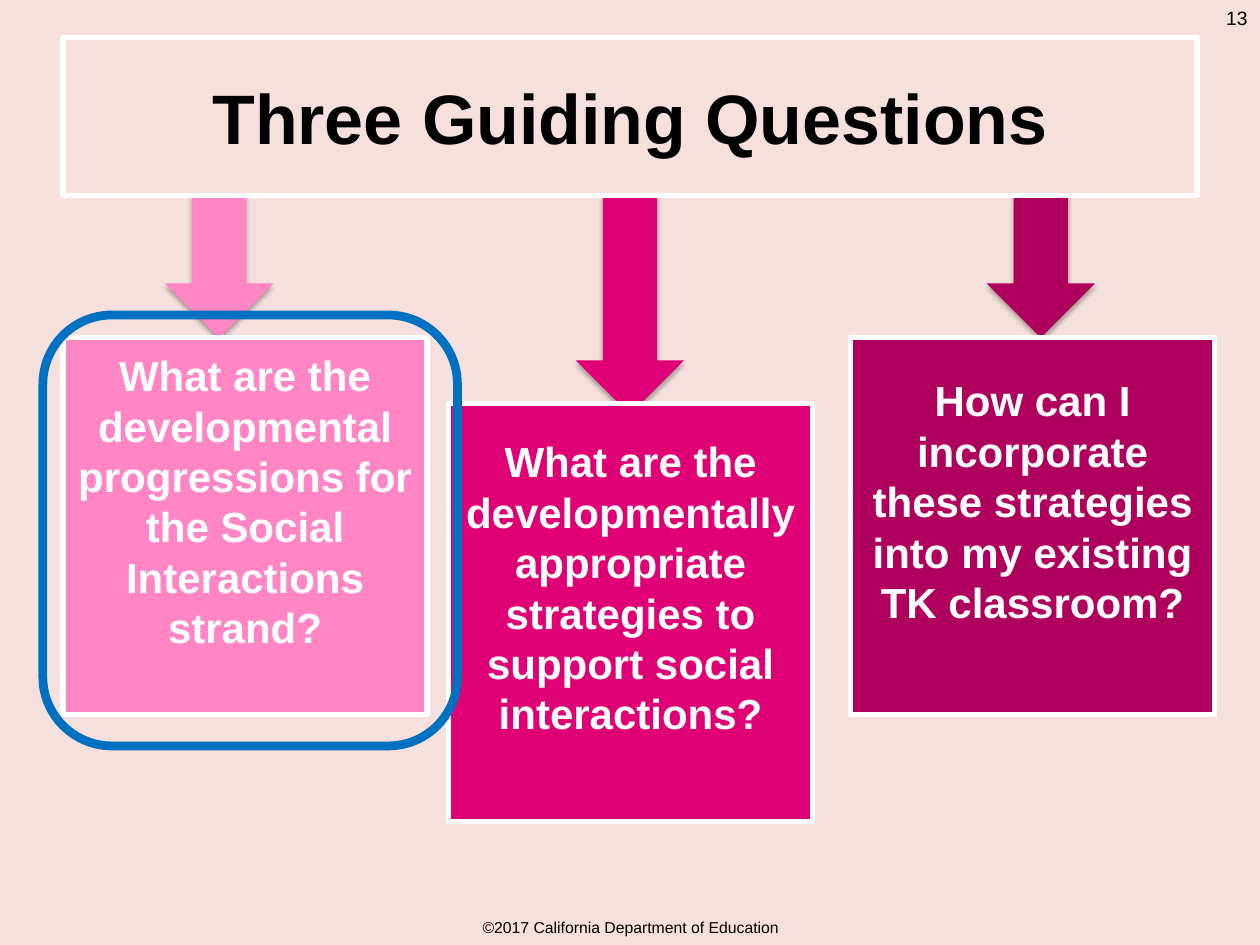
import pptx
import pptx.dml.color
import pptx.enum.shapes
import pptx.enum.text
import pptx.oxml
import pptx.oxml.ns
import pptx.util
from pptx.util import Inches

RGBColor = pptx.dml.color.RGBColor
Align = pptx.enum.text.PP_ALIGN
Anchor = pptx.enum.text.MSO_ANCHOR
Preset = pptx.enum.shapes.MSO_SHAPE

BACKGROUND = RGBColor(0xF5, 0xE0, 0xDD)
BLACK = RGBColor(0x00, 0x00, 0x00)
WHITE = RGBColor(0xFF, 0xFF, 0xFF)
BLUE = RGBColor(0x00, 0x70, 0xC0)
LIGHT_PINK = RGBColor(0xFF, 0x85, 0xC5)
PINK = RGBColor(0xDE, 0x00, 0x74)
DARK_PINK = RGBColor(0xB0, 0x00, 0x5D)

SHADOW = (
    f'<a:outerShdw {pptx.oxml.ns.nsdecls("a")} blurRad="40000" dist="23000" '
    'dir="5400000" rotWithShape="0"><a:srgbClr val="000000">'
    '<a:alpha val="35000"/></a:srgbClr></a:outerShdw>'
)
ARROW_TOP = 1.55
ARROW_WIDTH = 0.86

QUESTIONS = [
    ("What are the developmental progressions for the Social Interactions strand?",
     LIGHT_PINK, (0.5, 2.68, 2.89, 2.99), 1.74, 2.68),
    ("What are the developmentally appropriate strategies to support social interactions?",
     PINK, (3.56, 3.2, 2.89, 3.32), 5, 3.29),
    ("How can I incorporate these strategies into my existing TK classroom?",
     DARK_PINK, (6.75, 2.68, 2.89, 2.99), 8.26, 2.68),
]


def write_text(shape, text, size, color, alignment, anchor, bold=False):
    """Fill a shape with one formatted paragraph."""
    frame = shape.text_frame
    frame.word_wrap = True
    frame.auto_size = pptx.enum.text.MSO_AUTO_SIZE.NONE
    frame.vertical_anchor = anchor
    paragraph = frame.paragraphs[0]
    paragraph.text = text
    paragraph.alignment = alignment
    paragraph.space_before = pptx.util.Pt(0)
    properties = paragraph._p.get_or_add_pPr()
    properties.set("marL", "0")
    properties.set("indent", "0")
    properties.append(pptx.oxml.parse_xml(f'<a:buNone {pptx.oxml.ns.nsdecls("a")}/>'))
    font = paragraph.font
    font.name = "Arial"
    font.size = pptx.util.Pt(size)
    font.bold = bold
    font.color.rgb = color


def place_panel(placeholder, box, text, size, color):
    """Move a placeholder into a box and give it a white border and bold text."""
    placeholder.left, placeholder.top, placeholder.width, placeholder.height = map(Inches, box)
    placeholder.line.color.rgb = WHITE
    placeholder.line.width = pptx.util.Pt(3)
    write_text(placeholder, text, size, color, Align.CENTER, Anchor.MIDDLE, bold=True)


def add_arrow(slide, center, bottom, color):
    """Add a shadowed down arrow behind the panels."""
    arrow = slide.shapes.add_shape(
        Preset.DOWN_ARROW, Inches(center - ARROW_WIDTH / 2), Inches(ARROW_TOP),
        Inches(ARROW_WIDTH), Inches(bottom - ARROW_TOP))
    arrow.fill.solid()
    arrow.fill.fore_color.rgb = color
    arrow.line.fill.background()
    arrow.shadow.inherit = False
    effects = arrow._element.spPr.find(pptx.oxml.ns.qn("a:effectLst"))
    effects.append(pptx.oxml.parse_xml(SHADOW))
    slide.shapes._spTree.insert(2, arrow._element)


def add_question(slide, placeholder, text, color, box, arrow_center, arrow_bottom):
    """Place a question panel and the arrow that leads to it."""
    place_panel(placeholder, box, text, 24, WHITE)
    placeholder.fill.solid()
    placeholder.fill.fore_color.rgb = color
    placeholder.text_frame.margin_bottom = Inches(0.45)
    add_arrow(slide, arrow_center, arrow_bottom, color)


def add_label(slide, box, text, size, alignment, anchor):
    """Add a small black text box."""
    label = slide.shapes.add_textbox(*map(Inches, box))
    write_text(label, text, size, BLACK, alignment, anchor)


def add_highlight(slide, box):
    """Add the rounded outline around the current question."""
    outline = slide.shapes.add_shape(Preset.ROUNDED_RECTANGLE, *map(Inches, box))
    outline.fill.background()
    outline.line.color.rgb = BLUE
    outline.line.width = pptx.util.Pt(5)
    outline.shadow.inherit = False


def main():
    """Build and save the slide."""
    presentation = pptx.Presentation()
    presentation.slide_width = Inches(10)
    presentation.slide_height = Inches(7.5)
    comparison = presentation.slide_layouts.get_by_name("Comparison")
    slide = presentation.slides.add_slide(comparison)
    slide.background.fill.solid()
    slide.background.fill.fore_color.rgb = BACKGROUND

    title, *bodies, spare = slide.placeholders
    spare._element.getparent().remove(spare._element)
    place_panel(title, (0.5, 0.3, 9, 1.25), "Three Guiding Questions", 40, BLACK)
    for placeholder, question in zip(bodies, QUESTIONS):
        add_question(slide, placeholder, *question)

    add_label(slide, (0.38, 7.23, 9.25, 0.25), "©2017 California Department of Education",
              9, Align.CENTER, Anchor.MIDDLE)
    add_label(slide, (9.5, 0, 0.5, 0.4), "13", 11, Align.RIGHT, Anchor.TOP)
    add_highlight(slide, (0.34, 2.5, 3.29, 3.42))
    presentation.save("out.pptx")


if __name__ == "__main__":
    main()
